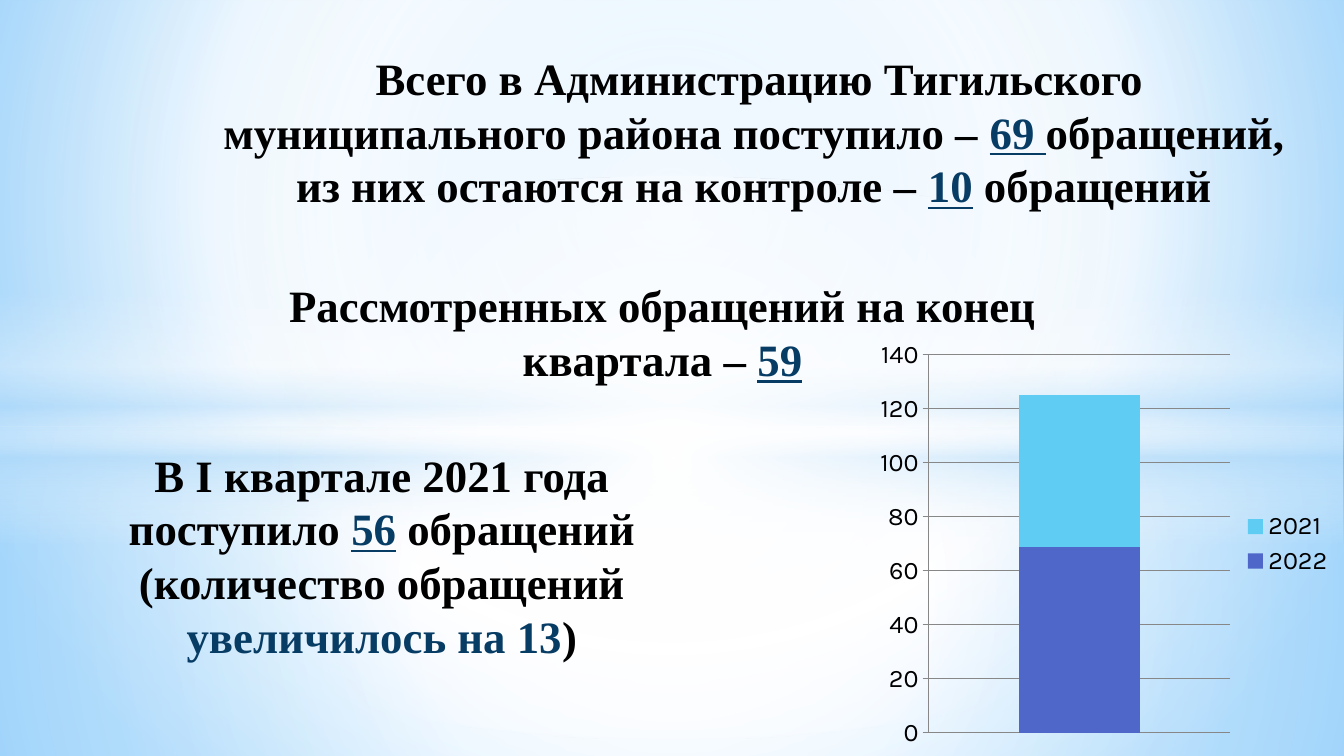
import pptx
import pptx.util
import pptx.oxml
import pptx.oxml.ns
import pptx.dml.color
import pptx.chart.data
import pptx.enum.chart
import pptx.enum.shapes
import pptx.enum.text
import lxml.etree

Pt = pptx.util.Pt
qn = pptx.oxml.ns.qn
SHAPE = pptx.enum.shapes.MSO_SHAPE
CHART = pptx.enum.chart

WIDTH, HEIGHT = 960, 540
BLACK, NAVY, GRID = "000000", "073C65", "878787"
WHITE, SKY = "FFFFFF", "B4DCFA"
CENTER = (50, 50, 50, 50)


def color(hex_string):
    return pptx.dml.color.RGBColor.from_string(hex_string)


def set_gradient(parent, stops, focus=None, angle=0):
    """Replace the solid fill of parent; stops are (position, colour, opacity) in percent."""
    grad = lxml.etree.Element(qn("a:gradFill"), rotWithShape="1")
    gs_list = lxml.etree.SubElement(grad, qn("a:gsLst"))
    for position, hex_string, opacity in stops:
        gs = lxml.etree.SubElement(gs_list, qn("a:gs"), pos=str(position * 1000))
        clr = lxml.etree.SubElement(gs, qn("a:srgbClr"), val=hex_string)
        if opacity < 100:
            lxml.etree.SubElement(clr, qn("a:alpha"), val=str(opacity * 1000))
    if focus:
        path = lxml.etree.SubElement(grad, qn("a:path"), path="circle")
        sides = {side: str(value * 1000) for side, value in zip("ltrb", focus)}
        lxml.etree.SubElement(path, qn("a:fillToRect"), **sides)
    else:
        lxml.etree.SubElement(grad, qn("a:lin"), ang=str(angle * 60000), scaled="0")
    solid = parent.find(qn("a:solidFill"))
    parent.replace(solid, grad)


def add_glow(s, kind, top, height, stops, **direction):
    sp = s.shapes.add_shape(kind, 0, Pt(top), Pt(WIDTH), Pt(height))
    sp.shadow.inherit = False
    sp.line.fill.background()
    sp.fill.solid()
    sp.fill.fore_color.rgb = color(WHITE)
    set_gradient(sp.element.spPr, stops, **direction)


def add_run(p, text, size=32, font="Times New Roman", fill=BLACK, bold=True, underline=False):
    r = p.add_run()
    r.text = text
    r.font.size, r.font.name = Pt(size), font
    r.font.bold, r.font.underline = bold, underline
    r.font.color.rgb = color(fill)


def fill_text(sp, box, paragraphs):
    """Place sp in box; each paragraph is a list of (text, format) pairs."""
    sp.left, sp.top, sp.width, sp.height = (Pt(v) for v in box)
    tf = sp.text_frame
    tf.word_wrap = True
    tf.auto_size = pptx.enum.text.MSO_AUTO_SIZE.SHAPE_TO_FIT_TEXT
    tf.vertical_anchor = pptx.enum.text.MSO_ANCHOR.TOP
    for i, runs in enumerate(paragraphs):
        p = tf.add_paragraph() if i else tf.paragraphs[0]
        p.alignment = pptx.enum.text.PP_ALIGN.CENTER
        for text, style in runs:
            add_run(p, text, **style)


def draw_background(s):
    fill = s.background.fill
    fill.solid()
    fill.fore_color.rgb = color(WHITE)
    set_gradient(s.element.find(".//" + qn("p:bgPr")),
                 [(0, "9ED5FF", 100), (60, WHITE, 100), (100, "5BB9FF", 100)],
                 focus=(20, 10, 20, 60))
    horizon = 304.5
    # Lower and upper halves
    add_glow(s, SHAPE.RECTANGLE, horizon, HEIGHT - horizon,
             [(0, WHITE, 91), (37, WHITE, 76), (100, SKY, 79)], focus=CENTER)
    add_glow(s, SHAPE.RECTANGLE, 0, horizon,
             [(0, WHITE, 89), (48, WHITE, 62), (100, SKY, 79)], focus=CENTER)
    # Horizon band
    add_glow(s, SHAPE.RECTANGLE, 209, 180,
             [(0, WHITE, 0), (29, WHITE, 30), (45, SKY, 40),
              (55, WHITE, 26), (65, SKY, 60), (100, WHITE, 0)], angle=90)
    # Central light
    add_glow(s, SHAPE.OVAL, 126, 402, [(0, WHITE, 100), (54, WHITE, 0)], focus=CENTER)


def draw_chart(s, box):
    data = pptx.chart.data.CategoryChartData()
    data.categories = ["1"]
    series = [("2022", 69, "4E67C8"), ("2021", 56, "5ECCF3")]
    for name, value, _ in series:
        data.add_series(name, [value])
    chart = s.shapes.add_chart(CHART.XL_CHART_TYPE.COLUMN_STACKED,
                               *(Pt(v) for v in box), data).chart
    chart.has_title = False
    chart.font.size, chart.font.name = Pt(18), "Karla"
    chart.font.color.rgb = color(BLACK)

    plot = chart.plots[0]
    plot.vary_by_categories = False
    plot.overlap, plot.gap_width = 100, 150
    for ser, (_, _, hex_string) in zip(plot.series, series):
        ser.format.fill.solid()
        ser.format.fill.fore_color.rgb = color(hex_string)

    chart.category_axis.visible = False
    axis = chart.value_axis
    axis.minimum_scale, axis.maximum_scale, axis.major_unit = 0, 140, 20
    axis.major_tick_mark = CHART.XL_TICK_MARK.CROSS
    axis.has_major_gridlines = True
    for line in (axis.format.line, axis.major_gridlines.format.line):
        line.color.rgb = color(GRID)
        line.width = Pt(0.75)

    chart.has_legend = True
    chart.legend.position = CHART.XL_LEGEND_POSITION.RIGHT
    chart.legend.include_in_layout = False


def build_appeals_slide(prs):
    s = prs.slides.add_slide(prs.slide_layouts[5])
    draw_background(s)
    plain, figure, accent = {}, {"fill": NAVY, "underline": True}, {"fill": NAVY}

    # Title, brought in front of the background shapes
    title = s.shapes.title
    title.element.getparent().append(title.element)
    fill_text(title, (142, 32.5, 801, 124), [
        [("Всего в Администрацию Тигильского муниципального района поступило – ", plain),
         ("69 ", figure), ("обращений, ", plain)],
        [("из них остаются на контроле – ", plain), ("10", figure), (" обращений ", plain)],
    ])

    # Statements
    statements = [
        ((159, 195, 628.5, 85),
         [("Рассмотренных обращений на конец квартала – ", plain), ("59", figure)]),
        ((33, 316, 479.5, 163),
         [("В I квартале 2021 года поступило ", plain), ("56", figure),
          (" обращений (количество обращений ", plain),
          ("увеличилось на 13", accent), (")", plain)]),
    ]
    for box, runs in statements:
        fill_text(s.shapes.add_textbox(0, 0, 0, 0), box, [runs])

    draw_chart(s, (622, 237, 338, 303))


def main():
    prs = pptx.Presentation()
    prs.slide_width, prs.slide_height = Pt(WIDTH), Pt(HEIGHT)
    build_appeals_slide(prs)
    prs.save("out.pptx")


if __name__ == "__main__":
    main()
